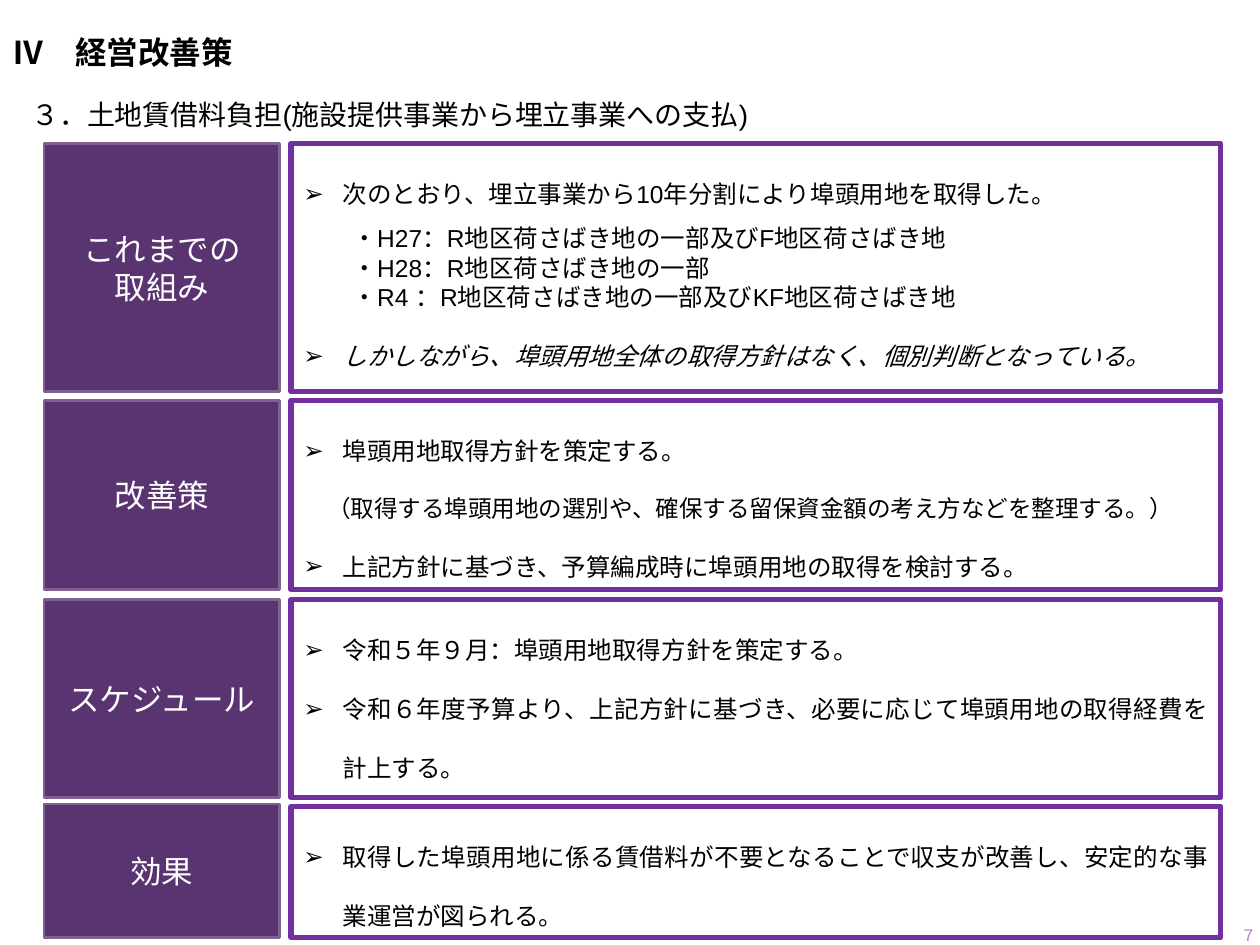
from lxml.etree import SubElement
from pptx import Presentation
from pptx.dml.color import RGBColor
from pptx.enum.shapes import MSO_SHAPE
from pptx.enum.text import MSO_ANCHOR, PP_ALIGN
from pptx.oxml.ns import qn
from pptx.util import Inches, Pt

COLORS = {"text": "000000", "white": "FFFFFF", "label": "5A3471",
          "label_line": "806292", "frame": "7030A0", "page": "AD84C6"}
BODY_FONT, LABEL_FONT = "Arial", "League Spartan"
LABEL_LEFT, LABEL_WIDTH = 0.35, 1.87
BODY_LEFT, BODY_WIDTH = 2.31, 7.38

# Paragraph styles of the body boxes
POINT = {"bullet": "➢", "indent": 0.31, "spacing": 2}
REMARK = {"indent": 0.19, "spacing": 2, "size": 13.5}
FIRST_ITEM = {"indent": 0.39, "spacing": 1.5}
ITEM = {"indent": 0.39}
TABBED_ITEM = {"indent": 0.39, "tab": 0.9}

# Label lines, label top, body top, common bottom, body paragraphs
SECTIONS = [
    (["これまでの", "取組み"], 1.14, 1.14, 3.11, [
        ("次のとおり、埋立事業から10年分割により埠頭用地を取得した。", POINT),
        ("・H27：R地区荷さばき地の一部及びF地区荷さばき地", FIRST_ITEM),
        ("・H28：R地区荷さばき地の一部", ITEM),
        ("・R4\t：R地区荷さばき地の一部及びKF地区荷さばき地", TABBED_ITEM),
        ("しかしながら、埠頭用地全体の取得方針はなく、個別判断となっている。",
         {**POINT, "italic": True}),
    ]),
    (["改善策"], 3.18, 3.18, 4.68, [
        ("埠頭用地取得方針を策定する。", POINT),
        ("（取得する埠頭用地の選別や、確保する留保資金額の考え方などを整理する。）", REMARK),
        ("上記方針に基づき、予算編成時に埠頭用地の取得を検討する。", POINT),
    ]),
    (["スケジュール"], 4.76, 4.76, 6.33, [
        ("令和５年９月：埠頭用地取得方針を策定する。", POINT),
        ("令和６年度予算より、上記方針に基づき、必要に応じて埠頭用地の取得経費を計上する。", POINT),
    ]),
    (["効果"], 6.38, 6.4, 7.44, [
        ("取得した埠頭用地に係る賃借料が不要となることで収支が改善し、安定的な事業運営が図られる。", POINT),
    ]),
]


def rgb(name):
    return RGBColor.from_string(COLORS[name])


class SlideBuilder:
    def __init__(self, slide):
        self.slide = slide

    def fill_text(self, frame, paragraphs, anchor=MSO_ANCHOR.TOP, **base):
        """Fill a text frame with (text, style) paragraphs."""
        frame.word_wrap = True
        frame.vertical_anchor = anchor
        for number, (text, own) in enumerate(paragraphs):
            style = {**base, **own}
            paragraph = frame.add_paragraph() if number else frame.paragraphs[0]
            paragraph.alignment = style["align"]
            paragraph.line_spacing = style.get("spacing", 1.0)
            self.indent(paragraph, style)
            run = paragraph.add_run()
            run.text = text
            font_values = {"name": style["font"], "size": Pt(style["size"]),
                           "bold": style.get("bold"), "italic": style.get("italic")}
            for attribute, value in font_values.items():
                setattr(run.font, attribute, value)
            run.font.color.rgb = rgb(style["color"])

    def indent(self, paragraph, style):
        """Set indent, bullet and tab stop, in schema order."""
        properties = paragraph._p.get_or_add_pPr()
        margin = Inches(style.get("indent", 0))
        properties.set("marL", str(margin))
        properties.set("indent", str(-margin if "bullet" in style else 0))
        if "bullet" in style:
            SubElement(properties, qn("a:buFont"), typeface="Arial")
            SubElement(properties, qn("a:buChar"), char=style["bullet"])
        if "tab" in style:
            tabs = SubElement(properties, qn("a:tabLst"))
            SubElement(tabs, qn("a:tab"), pos=str(Inches(style["tab"])), algn="l")

    def text(self, box, content, **style):
        area = self.slide.shapes.add_textbox(*map(Inches, box))
        self.fill_text(area.text_frame, [(content, {})], **style)

    def rectangle(self, box, fill, line, width):
        shape = self.slide.shapes.add_shape(MSO_SHAPE.RECTANGLE, *map(Inches, box))
        shape.shadow.inherit = False
        if fill:
            shape.fill.solid()
            shape.fill.fore_color.rgb = rgb(fill)
        else:
            shape.fill.background()
        shape.line.color.rgb = rgb(line)
        shape.line.width = Pt(width)
        return shape.text_frame

    def label(self, top, bottom, lines):
        frame = self.rectangle((LABEL_LEFT, top, LABEL_WIDTH, bottom - top),
                               "label", "label_line", 1.5)
        self.fill_text(frame, [(line, {}) for line in lines], MSO_ANCHOR.MIDDLE,
                       font=LABEL_FONT, size=18, color="white", align=PP_ALIGN.CENTER)

    def body(self, top, bottom, paragraphs):
        frame = self.rectangle((BODY_LEFT, top, BODY_WIDTH, bottom - top),
                               None, "frame", 3)
        self.fill_text(frame, paragraphs, font=BODY_FONT, size=14, color="text",
                       align=PP_ALIGN.JUSTIFY)


def main():
    deck = Presentation()
    deck.slide_width, deck.slide_height = Inches(10), Inches(7.5)
    builder = SlideBuilder(deck.slides.add_slide(deck.slide_layouts[6]))

    # Headings and page number
    builder.text((0, 0.21, 8.62, 0.68), "Ⅳ　経営改善策", font=BODY_FONT,
                 size=18, color="text", bold=True, align=PP_ALIGN.LEFT)
    builder.text((9.51, 7.22, 0.56, 0.4), "７", anchor=MSO_ANCHOR.MIDDLE,
                 font=LABEL_FONT, size=9, color="page", align=PP_ALIGN.RIGHT)
    builder.text((0.15, 0.46, 8.57, 0.57),
                 "３．土地賃借料負担(施設提供事業から埋立事業への支払)",
                 font=BODY_FONT, size=16, color="text", spacing=2,
                 align=PP_ALIGN.JUSTIFY)

    # Label and body of each section
    for lines, label_top, body_top, bottom, paragraphs in SECTIONS:
        builder.label(label_top, bottom, lines)
        builder.body(body_top, bottom, paragraphs)

    deck.save("out.pptx")


if __name__ == "__main__":
    main()
